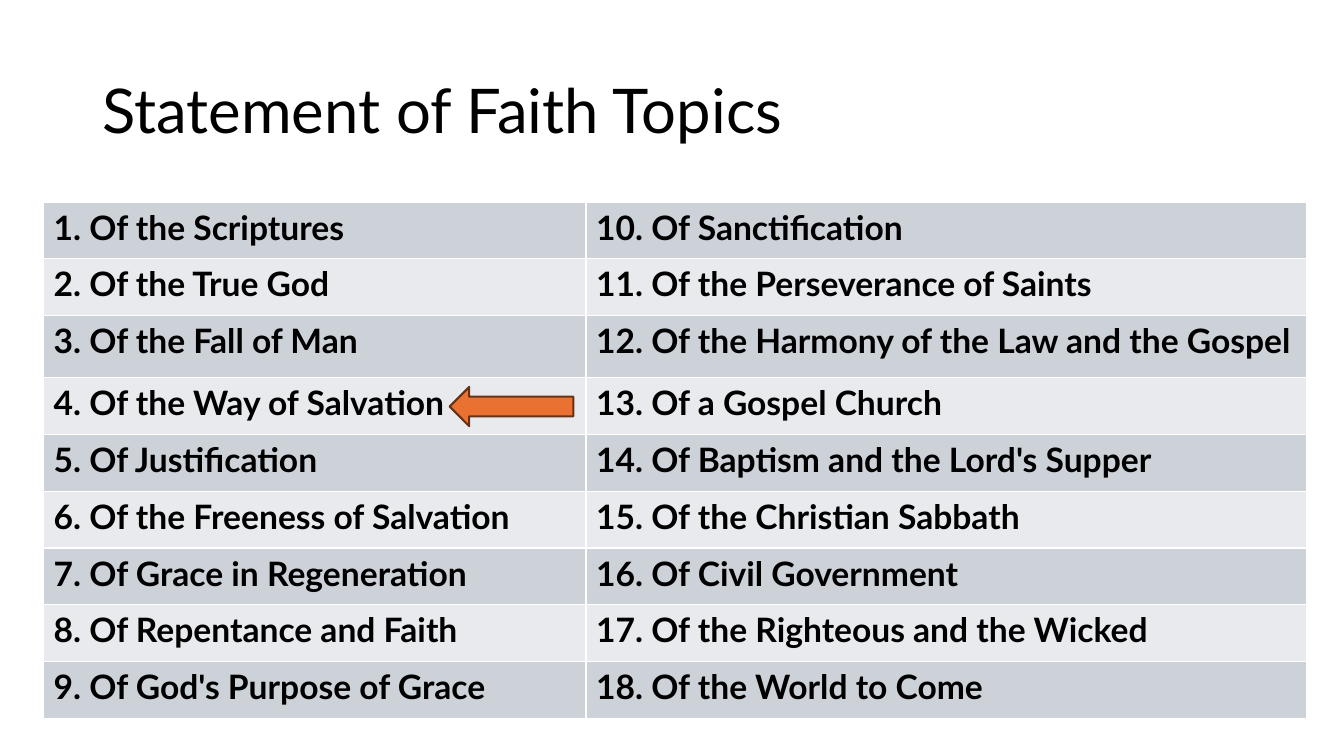
import lxml.etree
import pptx
import pptx.dml.color
import pptx.enum.shapes
import pptx.enum.text
import pptx.oxml.ns
import pptx.util
from pptx.util import Cm

FONT = "Lato"
COLORS = {
    "text": "000000",
    "dark band": "CCD2D8",
    "light band": "E8EAED",
    "border": "FFFFFF",
    "arrow": "E97132",
    "arrow outline": "663216",
}
TOPICS = [
    "Of the Scriptures",
    "Of the True God",
    "Of the Fall of Man",
    "Of the Way of Salvation",
    "Of Justification",
    "Of the Freeness of Salvation",
    "Of Grace in Regeneration",
    "Of Repentance and Faith",
    "Of God's Purpose of Grace",
    "Of Sanctification",
    "Of the Perseverance of Saints",
    "Of the Harmony of the Law and the Gospel",
    "Of a Gospel Church",
    "Of Baptism and the Lord's Supper",
    "Of the Christian Sabbath",
    "Of Civil Government",
    "Of the Righteous and the Wicked",
    "Of the World to Come",
]
COLUMN_WIDTHS = [Cm(13.67), Cm(18.16)]
ROW_COUNT = len(TOPICS) // len(COLUMN_WIDTHS)
ROW_HEIGHT = Cm(1.43)
TALL_ROW, TALL_ROW_HEIGHT = 2, Cm(1.57)


def color(name):
    return pptx.dml.color.RGBColor.from_string(COLORS[name])


def write_text(text_frame, text, size, bold=False, line_spacing=None):
    paragraph = text_frame.paragraphs[0]
    paragraph.alignment = pptx.enum.text.PP_ALIGN.LEFT
    paragraph.line_spacing = line_spacing
    run = paragraph.add_run()
    run.text = text
    run.font.name = FONT
    run.font.size = pptx.util.Pt(size)
    run.font.bold = bold
    run.font.color.rgb = color("text")


def add_title(slide, text):
    title = slide.shapes.title
    title.left, title.top = Cm(2.33), Cm(1.01)
    title.width, title.height = Cm(29.21), Cm(3.68)
    title.text_frame.vertical_anchor = pptx.enum.text.MSO_ANCHOR.MIDDLE
    write_text(title.text_frame, text, size=44, line_spacing=0.9)


def set_borders(cell):
    properties = cell._tc.get_or_add_tcPr()
    for side in ("a:lnL", "a:lnR", "a:lnT", "a:lnB"):
        line = lxml.etree.SubElement(properties, pptx.oxml.ns.qn(side), w="12700")
        fill = lxml.etree.SubElement(line, pptx.oxml.ns.qn("a:solidFill"))
        lxml.etree.SubElement(fill, pptx.oxml.ns.qn("a:srgbClr"), val=COLORS["border"])


def add_topic_table(slide):
    table = slide.shapes.add_table(
        ROW_COUNT, len(COLUMN_WIDTHS), Cm(1.1), Cm(5.09),
        sum(COLUMN_WIDTHS), ROW_HEIGHT * (ROW_COUNT - 1) + TALL_ROW_HEIGHT,
    ).table
    table.first_row = False
    for column, width in zip(table.columns, COLUMN_WIDTHS):
        column.width = width
    for index, row in enumerate(table.rows):
        row.height = TALL_ROW_HEIGHT if index == TALL_ROW else ROW_HEIGHT

    # Topics run down the first column, then down the second
    for index, topic in enumerate(TOPICS):
        column_index, row_index = divmod(index, ROW_COUNT)
        cell = table.cell(row_index, column_index)
        set_borders(cell)
        cell.fill.solid()
        cell.fill.fore_color.rgb = color("light band" if row_index % 2 else "dark band")
        write_text(cell.text_frame, f"{index + 1}. {topic}", size=24, bold=True)


def add_arrow(slide, left, top, width, height):
    arrow = slide.shapes.add_shape(
        pptx.enum.shapes.MSO_SHAPE.LEFT_ARROW, left, top, width, height)
    arrow.shadow.inherit = False
    arrow.fill.solid()
    arrow.fill.fore_color.rgb = color("arrow")
    arrow.line.color.rgb = color("arrow outline")
    arrow.line.width = pptx.util.Pt(1.5)


def main():
    presentation = pptx.Presentation()
    presentation.slide_width, presentation.slide_height = Cm(33.87), Cm(19.05)
    # Title Only layout
    slide = presentation.slides.add_slide(presentation.slide_layouts[5])

    add_title(slide, "Statement of Faith Topics")
    add_topic_table(slide)
    # Marks the current topic
    add_arrow(slide, Cm(11.33), Cm(9.75), Cm(3.12), Cm(0.99))

    presentation.save("out.pptx")


if __name__ == "__main__":
    main()
